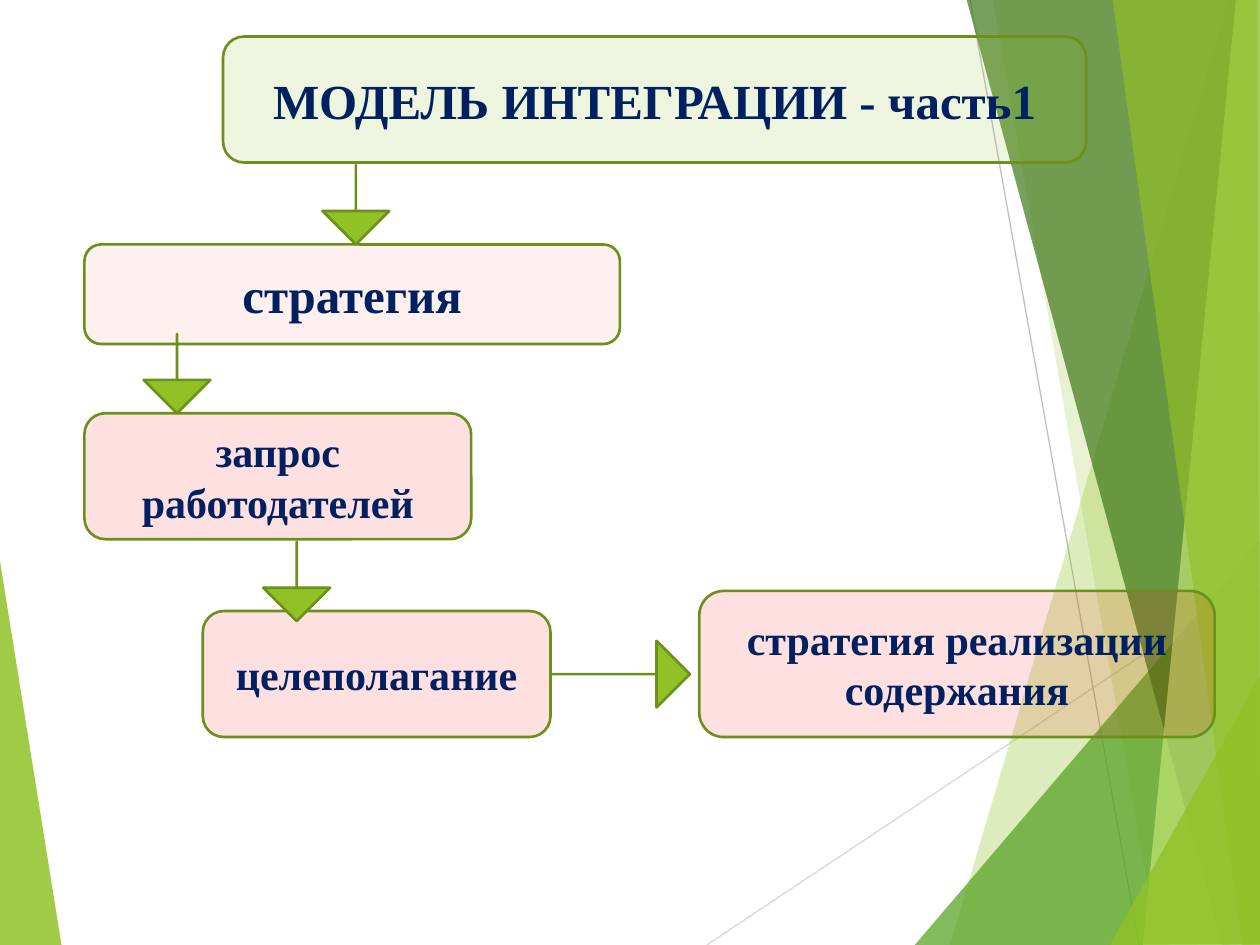
from dataclasses import dataclass

from lxml import etree
from pptx import Presentation
from pptx.dml.color import RGBColor
from pptx.enum.shapes import MSO_CONNECTOR, MSO_SHAPE
from pptx.enum.text import MSO_ANCHOR, PP_ALIGN
from pptx.oxml.ns import qn
from pptx.util import Inches, Pt

ROUNDED = MSO_SHAPE.ROUNDED_RECTANGLE
DOWN_ARROW = MSO_SHAPE.DOWN_ARROW
STRAIGHT = MSO_CONNECTOR.STRAIGHT
MIDDLE = MSO_ANCHOR.MIDDLE
CENTER = PP_ALIGN.CENTER


@dataclass(frozen=True)
class Theme:
    font: str = "Times New Roman"
    text: str = "002060"
    green: str = "90C226"
    mid_green: str = "54A021"
    dark_green: str = "3F7819"
    pale_green: str = "C0E474"
    red: str = "FF0000"
    outline: str = "6B901C"
    light_ray: str = "D9D9D9"
    ray: str = "BFBFBF"
    heading_size: int = 28
    step_size: int = 24
    outline_width: float = 1.5
    ray_width: float = 0.75


THEME = Theme()

# Corner points, colour, opacity in percent
LEFT_WEDGE = ([(-0.01, 4.39), (0.49, 7.51), (-0.01, 7.5)], THEME.green, 85)
RIGHT_FACETS = [
    ([(9.75, 0), (7.54, 7.5), (10.02, 7.51), (10.01, 0.01)], THEME.green, 30),
    ([(7.88, -0.01), (9.19, 7.5), (10.01, 7.5), (10.01, -0.01)], THEME.green, 20),
    ([(7.26, 7.5), (10, 4.29), (10.01, 7.5)], THEME.mid_green, 72),
    ([(7.67, -0.01), (9.7, 7.5), (10.01, 7.49), (10.01, -0.01)], THEME.dark_green, 70),
    ([(9.81, -0.01), (9.07, 7.5), (10.01, 7.5), (10, -0.01)], THEME.pale_green, 70),
    ([(8.83, -0.01), (9.86, 7.5), (10, 7.5), (9.98, -0.01)], THEME.green, 65),
    ([(8.81, 7.5), (10.01, 5.35), (10.01, 7.49)], THEME.green, 80),
]
RAYS = [
    ((5.61, 7.5), (10.01, 4.57), THEME.light_ray),
    ((7.7, 0), (9.04, 7.5), THEME.ray),
]

# Text, (left, top, width, height), fill, opacity in percent, type size
BOXES = [
    ("стратегия", (0.67, 1.94, 4.25, 0.79), THEME.red, 6, THEME.heading_size),
    ("МОДЕЛЬ ИНТЕГРАЦИИ - часть1", (1.77, 0.29, 6.85, 1), THEME.green, 15, THEME.heading_size),
    ("запрос работодателей", (0.67, 3.28, 3.07, 1), THEME.red, 12, THEME.step_size),
    ("целеполагание", (1.61, 4.85, 2.76, 1), THEME.red, 12, THEME.step_size),
    ("стратегия реализации содержания", (5.55, 4.69, 4.09, 1.16), THEME.red, 12, THEME.step_size),
]

# Left, top, length, rotation
ARROW_WIDTH = 0.53
ARROWS = [
    (2.56, 1.31, 0.63, 0),
    (1.14, 2.65, 0.63, 0),
    (2.09, 4.3, 0.63, 0),
    (4.66, 4.8, 1.1, 270),
]


def fill_shape(shape, color, opacity=100):
    shape.shadow.inherit = False
    shape.fill.solid()
    shape.fill.fore_color.rgb = RGBColor.from_string(color)
    if opacity < 100:
        color_xml = shape.fill._xPr.find(qn("a:solidFill"))[0]
        etree.SubElement(color_xml, qn("a:alpha")).set("val", str(opacity * 1000))


def set_line(shape, color, width):
    shape.line.color.rgb = RGBColor.from_string(color)
    shape.line.width = Pt(width)


def add_facet(slide, corners, color, opacity):
    start, *others = [(Inches(x), Inches(y)) for x, y in corners]
    builder = slide.shapes.build_freeform(*start)
    builder.add_line_segments(others, close=True)
    facet = builder.convert_to_shape()
    fill_shape(facet, color, opacity)
    facet.line.fill.background()


def add_ray(slide, start, end, color):
    ray = slide.shapes.add_connector(STRAIGHT, *map(Inches, start + end))
    set_line(ray, color, THEME.ray_width)
    etree.SubElement(ray._element.spPr, qn("a:effectLst"))


def add_box(slide, text, frame, color, opacity, size):
    box = slide.shapes.add_shape(ROUNDED, *map(Inches, frame))
    fill_shape(box, color, opacity)
    set_line(box, THEME.outline, THEME.outline_width)
    text_frame = box.text_frame
    text_frame.word_wrap = True
    text_frame.vertical_anchor = MIDDLE
    text_frame.text = text
    paragraph = text_frame.paragraphs[0]
    paragraph.alignment = CENTER
    font = paragraph.runs[0].font
    font.name = THEME.font
    font.size = Pt(size)
    font.bold = True
    font.color.rgb = RGBColor.from_string(THEME.text)


def add_arrow(slide, left, top, length, rotation):
    """Add an arrow whose shaft has no width, so it shows as a line with a head."""
    arrow = slide.shapes.add_shape(
        DOWN_ARROW, Inches(left), Inches(top), Inches(ARROW_WIDTH), Inches(length))
    arrow.adjustments[0] = 0
    arrow.adjustments[1] = 0.5
    arrow.rotation = rotation
    fill_shape(arrow, THEME.green)
    set_line(arrow, THEME.outline, THEME.outline_width)


def main():
    presentation = Presentation()
    presentation.slide_width = Inches(10)
    presentation.slide_height = Inches(7.5)
    slide = presentation.slides.add_slide(presentation.slide_layouts[6])

    add_facet(slide, *LEFT_WEDGE)
    for ray in RAYS:
        add_ray(slide, *ray)
    for facet in RIGHT_FACETS:
        add_facet(slide, *facet)
    for box in BOXES:
        add_box(slide, *box)
    for arrow in ARROWS:
        add_arrow(slide, *arrow)

    presentation.save("out.pptx")


if __name__ == "__main__":
    main()
